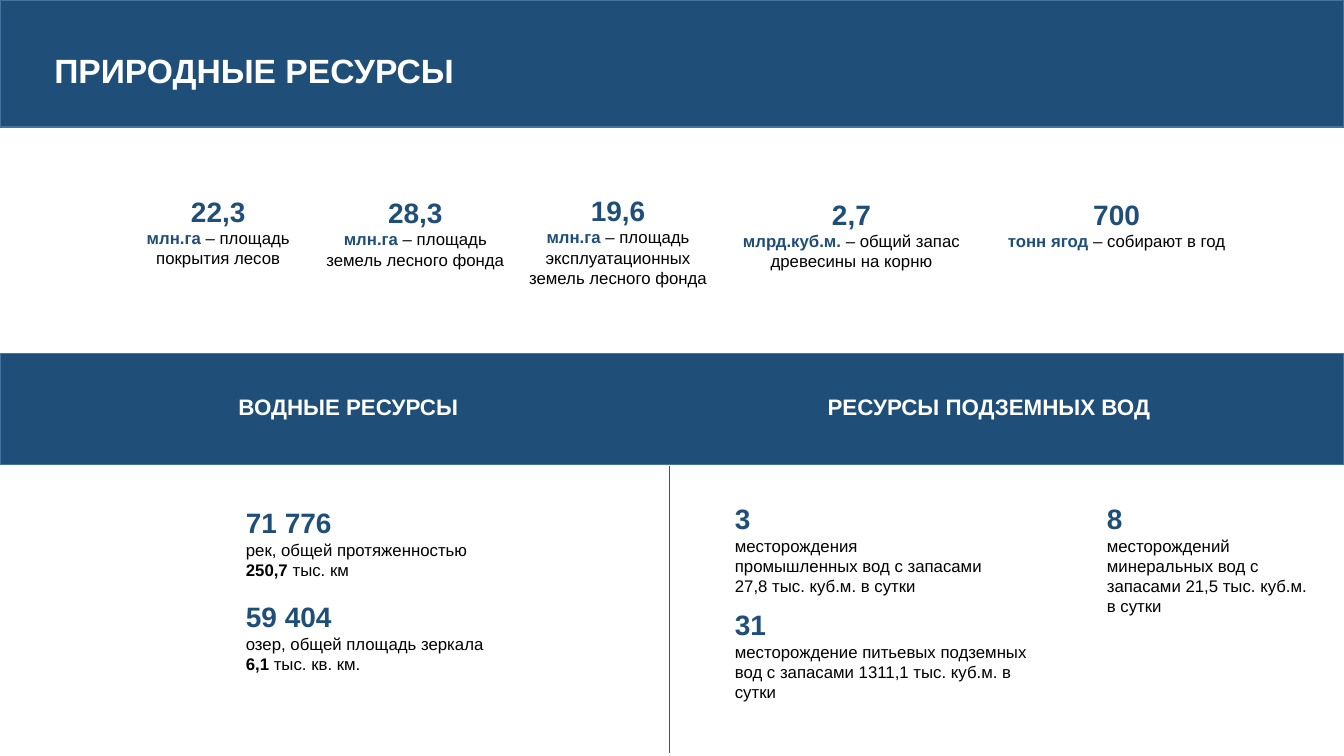
from lxml import etree
from pptx import Presentation
from pptx.dml.color import RGBColor
from pptx.enum.shapes import MSO_CONNECTOR, MSO_SHAPE
from pptx.enum.text import MSO_AUTO_SIZE, PP_ALIGN
from pptx.oxml.ns import qn
from pptx.util import Inches, Pt

COLORS = {"navy": "1F4E79", "edge": "43739E", "divider": "006A9F",
          "white": "FFFFFF", "black": "000000"}
FONT = "Arial"
SLIDE_W, SLIDE_H = 13.33, 7.5

# Bands: top, height
BANDS = [(0, 1.26), (3.51, 1.1)]

# Headings: text, size, box (left, top, width, height), alignment, wrap
HEADINGS = [
    ("ПРИРОДНЫЕ РЕСУРСЫ", 24, (0.44, 0.45, 4.3, 0.5), PP_ALIGN.LEFT, True),
    ("ВОДНЫЕ РЕСУРСЫ", 16, (1.97, 3.85, 2.97, 0.37), PP_ALIGN.CENTER, True),
    ("РЕСУРСЫ ПОДЗЕМНЫХ ВОД", 16, (8.11, 3.85, 3.44, 0.37), PP_ALIGN.LEFT, False),
]

# Forest figures: value, unit, description, box
FOREST = [
    ("22,3", "млн.га", " – площадь покрытия лесов", (1.25, 1.88, 1.83, 1.04)),
    ("28,3", "млн.га", " – площадь земель лесного фонда", (3.07, 1.89, 2.1, 1.04)),
    ("19,6", "млн.га", " – площадь эксплуатационных земель лесного фонда",
     (5.09, 1.87, 2.08, 1.25)),
    ("2,7", "млрд.куб.м.", " – общий запас древесины на корню",
     (7.19, 1.91, 2.51, 1.04)),
    ("700", "тонн ягод", " – собирают в год", (9.82, 1.91, 2.51, 0.84)),
]

# Water figures: value, description paragraphs of (text, bold) runs, box
WATER = [
    ("71 776", [[("рек, общей протяженностью ", False), ("250,7 ", True),
                 ("тыс. км", False)]], (2.34, 4.97, 2.65, 0.84)),
    ("59 404", [[("озер, общей площадь зеркала", False)],
                [("6,1", True), (" тыс. кв. км.", False)]], (2.34, 5.9, 3.14, 0.84)),
    ("3", [[("месторождения промышленных вод с запасами 27,8 тыс. куб.м. в сутки",
             False)]], (7.19, 4.93, 2.65, 1.04)),
    ("31", [[("месторождение питьевых подземных вод с запасами "
              "1311,1 тыс. куб.м. в сутки", False)]], (7.19, 5.98, 3.14, 1.25)),
    ("8", [[("месторождений минеральных вод с запасами 21,5 тыс. куб.м. в сутки",
             False)]], (10.88, 4.93, 2.26, 1.45)),
]
VALUE_SIZE, DETAIL_SIZE = 20, 12
DIVIDER_X, DIVIDER_TOP, DIVIDER_BOTTOM = 6.64, 4.62, 7.47


def rgb(name):
    return RGBColor.from_string(COLORS[name])


def add_text(slide, box, paragraphs, align=PP_ALIGN.LEFT, wrap=True):
    """Each paragraph is a list of (text, size, color, bold) runs."""
    frame = slide.shapes.add_textbox(*map(Inches, box)).text_frame
    frame.word_wrap = wrap
    frame.auto_size = MSO_AUTO_SIZE.SHAPE_TO_FIT_TEXT
    for index, runs in enumerate(paragraphs):
        paragraph = frame.add_paragraph() if index else frame.paragraphs[0]
        paragraph.alignment = align
        for text, size, color, bold in runs:
            run = paragraph.add_run()
            run.text = text
            run.font.name = FONT
            run.font.size = Pt(size)
            run.font.bold = bold
            run.font.color.rgb = rgb(color)


def value_line(value):
    return [(value, VALUE_SIZE, "navy", True)]


def main():
    deck = Presentation()
    deck.slide_width, deck.slide_height = Inches(SLIDE_W), Inches(SLIDE_H)
    slide = deck.slides.add_slide(deck.slide_layouts[6])

    # Full-width bands
    for top, height in BANDS:
        band = slide.shapes.add_shape(MSO_SHAPE.RECTANGLE, 0, Inches(top),
                                      Inches(SLIDE_W), Inches(height))
        band.shadow.inherit = False
        band.fill.solid()
        band.fill.fore_color.rgb = rgb("navy")
        band.line.color.rgb = rgb("edge")
        band.line.width = Pt(1)

    # Divider between surface and underground water
    divider = slide.shapes.add_connector(
        MSO_CONNECTOR.STRAIGHT, Inches(DIVIDER_X), Inches(DIVIDER_TOP),
        Inches(DIVIDER_X), Inches(DIVIDER_BOTTOM))
    divider.line.color.rgb = rgb("divider")
    divider.line.width = Pt(0.5)
    etree.SubElement(divider._element.spPr, qn("a:effectLst"))

    # Headings on the bands
    for text, size, box, align, wrap in HEADINGS:
        add_text(slide, box, [[(text, size, "white", True)]], align, wrap)

    # Forest figures
    for value, unit, description, box in FOREST:
        detail = [(unit, DETAIL_SIZE, "navy", True),
                  (description, DETAIL_SIZE, "black", False)]
        add_text(slide, box, [value_line(value), detail], PP_ALIGN.CENTER)

    # Water figures
    for value, description, box in WATER:
        details = [[(text, DETAIL_SIZE, "black", bold) for text, bold in runs]
                   for runs in description]
        add_text(slide, box, [value_line(value), *details])

    deck.save("out.pptx")


if __name__ == "__main__":
    main()
